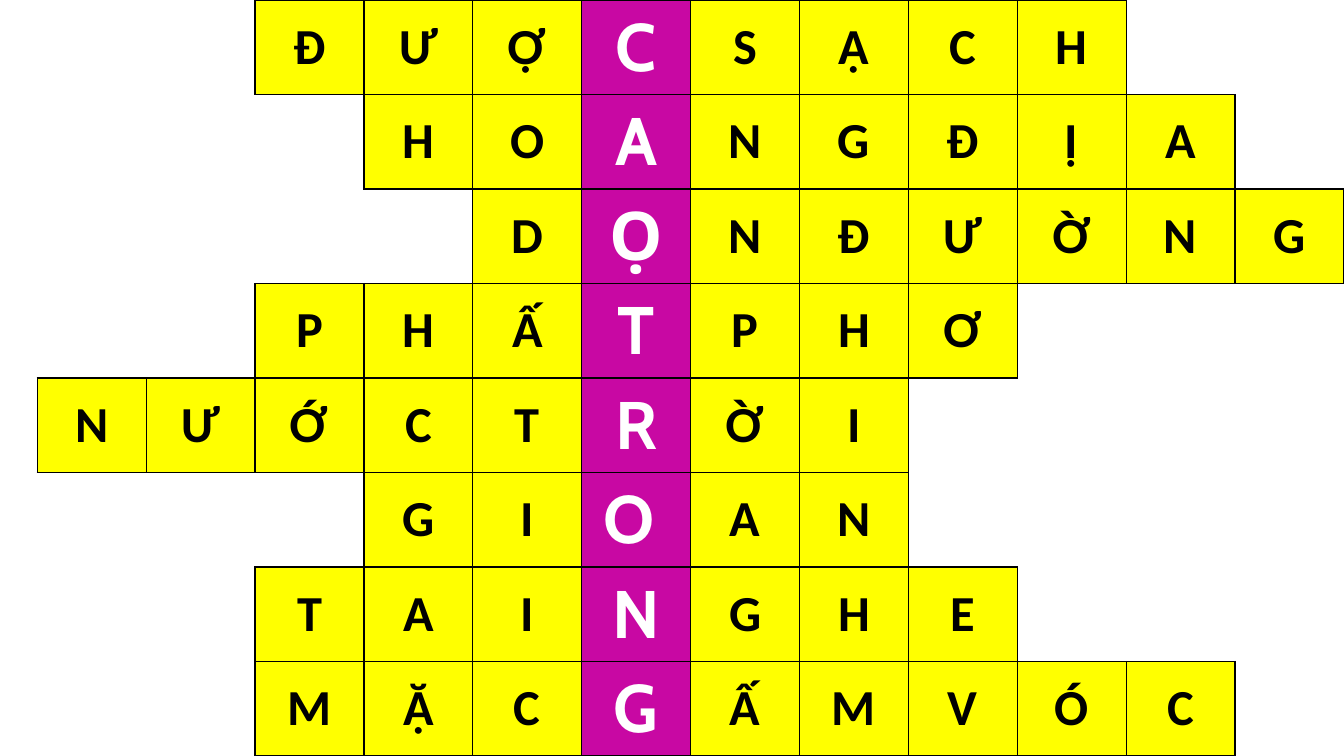
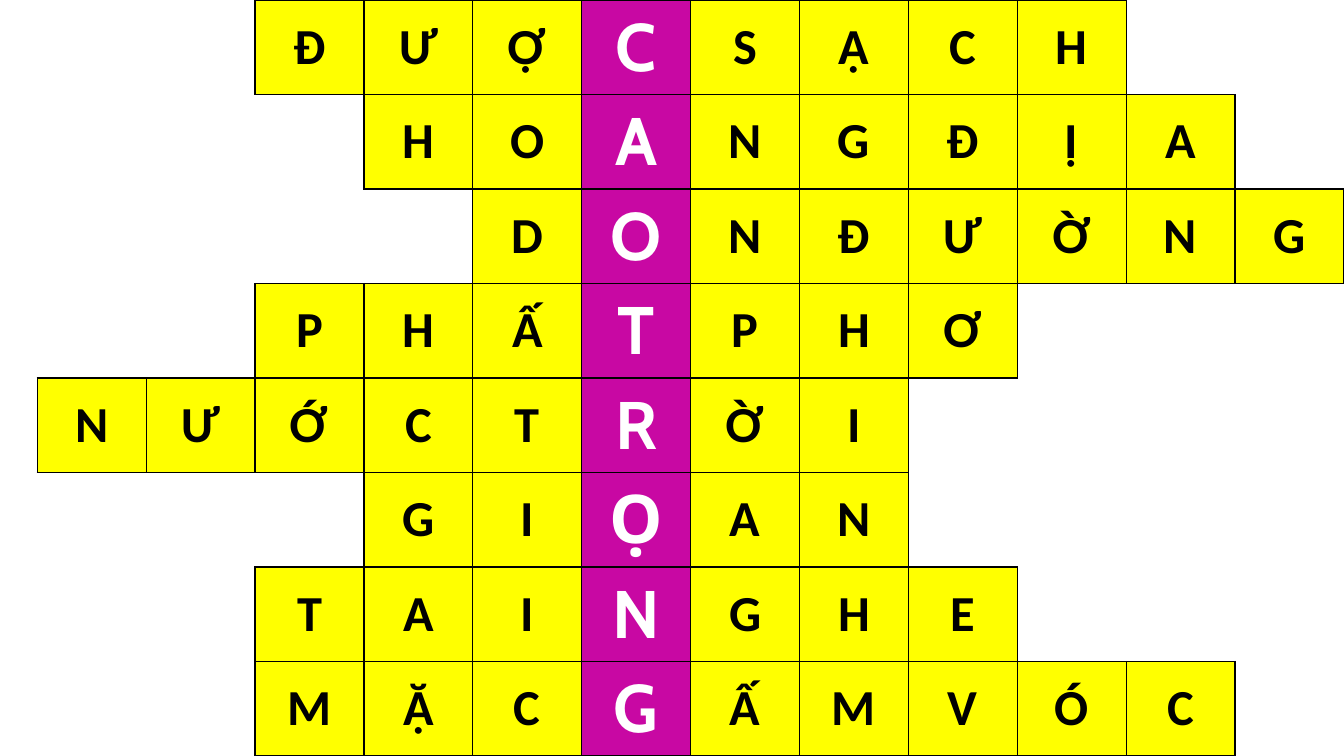
"""Build two crossword slides that share one letter grid and differ in the key word."""
from dataclasses import dataclass

from lxml import etree
from pptx import Presentation
from pptx.dml.color import RGBColor
from pptx.enum.text import MSO_ANCHOR, PP_ALIGN
from pptx.oxml.ns import qn
from pptx.util import Inches, Pt

MIDDLE = MSO_ANCHOR.MIDDLE
CENTER = PP_ALIGN.CENTER

BLACK = RGBColor(0x00, 0x00, 0x00)
WHITE = RGBColor(0xFF, 0xFF, 0xFF)
YELLOW = RGBColor(0xFF, 0xFF, 0x00)
MAGENTA = RGBColor(0xC8, 0x08, 0xA3)

PAGE_WIDTH, PAGE_HEIGHT = 13.33, 7.5
COLUMN_WIDTH = 1.08
COLUMN_COUNT = 13
KEY_COLUMN = 6
TABLE_WIDTH = COLUMN_WIDTH * COLUMN_COUNT
BORDER_WIDTH = Pt(1)
BLANK_LAYOUT = 6


@dataclass(frozen=True)
class Answer:
    """Letters of one answer on either side of the key column."""
    before: str
    after: str


@dataclass(frozen=True)
class CellStyle:
    """Look of a lettered cell."""
    fill: RGBColor
    color: RGBColor
    font: str
    size: int


LETTER_STYLE = CellStyle(YELLOW, BLACK, "Calibri", 36)
KEY_STYLE = CellStyle(MAGENTA, WHITE, "Cabin", 48)

ANSWERS = [
    Answer("ĐƯỢ", "SẠCH"),
    Answer("HO", "NGĐỊA"),
    Answer("D", "NĐƯỜNG"),
    Answer("PHẤ", "PHƠ"),
    Answer("NƯỚCT", "ỜI"),
    Answer("GI", "AN"),
    Answer("TAI", "GHE"),
    Answer("MẶC", "ẤMVÓC"),
]
KEY_WORDS = [
    ["C", "A", "Ọ", "T", "R", "O ", "N", "G"],
    ["C", "A", "O", "T", "R", "Ọ", "N", "G"],
]


def letter_grid(key_word: list[str]) -> dict[tuple[int, int], str]:
    """Map each lettered (row, column) to its letter."""
    grid = {}
    for row, (answer, key) in enumerate(zip(ANSWERS, key_word)):
        letters = [*answer.before, key, *answer.after]
        for column, letter in enumerate(letters, KEY_COLUMN - len(answer.before)):
            grid[row, column] = letter
    return grid


def set_border(cell, side: str, visible: bool) -> None:
    """Draw or clear one side of a cell."""
    line = etree.SubElement(cell._tc.get_or_add_tcPr(), qn(f"a:ln{side}"), w=str(BORDER_WIDTH))
    if visible:
        fill = etree.SubElement(line, qn("a:solidFill"))
        etree.SubElement(fill, qn("a:srgbClr"), val=str(BLACK))
    else:
        etree.SubElement(line, qn("a:noFill"))


def write_text(cell, text: str, *, font: str, size: int, color: RGBColor) -> None:
    """Put bold centred text in a cell."""
    cell.vertical_anchor = MIDDLE
    para = cell.text_frame.paragraphs[0]
    para.alignment = CENTER
    span = para.add_run()
    span.text = text
    span.font.name = font
    span.font.size = Pt(size)
    span.font.bold = True
    span.font.color.rgb = color


def draw_cell(cell, row: int, column: int, grid: dict[tuple[int, int], str]) -> None:
    """Format one cell, with a border wherever it meets a lettered cell."""
    place = (row, column)
    neighbours = {
        "L": (row, column - 1),
        "R": (row, column + 1),
        "T": (row - 1, column),
        "B": (row + 1, column),
    }
    for side, neighbour in neighbours.items():
        set_border(cell, side, place in grid or neighbour in grid)
    cell.margin_top = cell.margin_bottom = 0
    if place not in grid:
        cell.fill.background()
        return
    style = KEY_STYLE if column == KEY_COLUMN else LETTER_STYLE
    cell.fill.solid()
    cell.fill.fore_color.rgb = style.fill
    write_text(cell, grid[place], font=style.font, size=style.size, color=style.color)


def draw_crossword(page, key_word: list[str]) -> None:
    """Add the crossword table, flush with the right edge of the page."""
    grid = letter_grid(key_word)
    table = page.shapes.add_table(
        len(ANSWERS), COLUMN_COUNT,
        Inches(PAGE_WIDTH - TABLE_WIDTH), Inches(0),
        Inches(TABLE_WIDTH), Inches(PAGE_HEIGHT),
    ).table
    table.first_row = False
    table.horz_banding = False
    for row in range(len(ANSWERS)):
        for column in range(COLUMN_COUNT):
            draw_cell(table.cell(row, column), row, column, grid)


def main() -> None:
    """Create and save the deck."""
    deck = Presentation()
    deck.slide_width = Inches(PAGE_WIDTH)
    deck.slide_height = Inches(PAGE_HEIGHT)
    for key_word in KEY_WORDS:
        page = deck.slides.add_slide(deck.slide_layouts[BLANK_LAYOUT])
        draw_crossword(page, key_word)
    deck.save("out.pptx")


if __name__ == "__main__":
    main()
